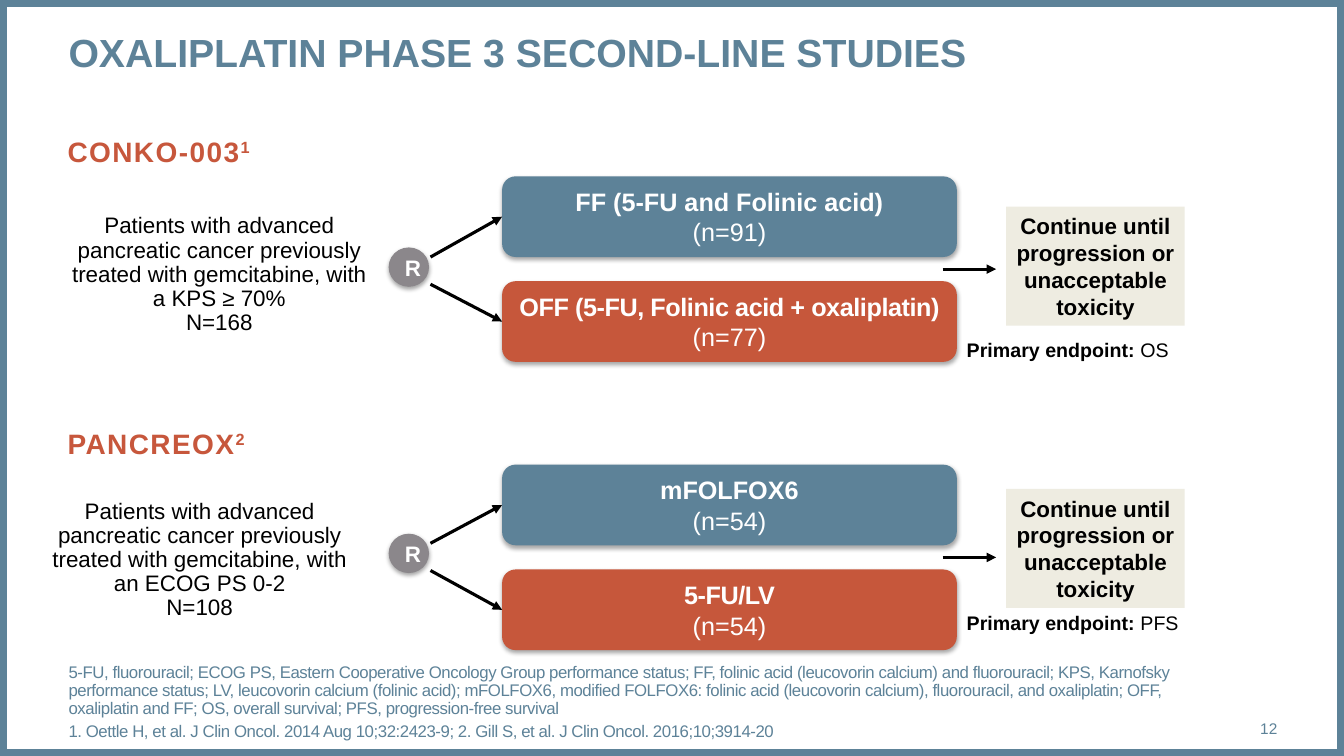
from dataclasses import dataclass

from pptx import Presentation
from pptx.dml.color import RGBColor
from pptx.enum.shapes import MSO_CONNECTOR, MSO_SHAPE
from pptx.enum.text import MSO_ANCHOR, MSO_AUTO_SIZE, PP_ALIGN
from pptx.oxml.ns import qn
from pptx.oxml.xmlchemy import OxmlElement
from pptx.util import Inches, Pt

STEEL = RGBColor(0x5D, 0x82, 0x98)
RUST = RGBColor(0xC6, 0x57, 0x3B)
HEADING_RUST = RGBColor(0xC7, 0x57, 0x3C)
GREY = RGBColor(0x8B, 0x87, 0x8B)
SAND = RGBColor(0xEE, 0xEC, 0xE1)
BLACK = RGBColor(0, 0, 0)
WHITE = RGBColor(0xFF, 0xFF, 0xFF)

LEFT, CENTER, RIGHT = PP_ALIGN.LEFT, PP_ALIGN.CENTER, PP_ALIGN.RIGHT
TOP, MIDDLE, BOTTOM = MSO_ANCHOR.TOP, MSO_ANCHOR.MIDDLE, MSO_ANCHOR.BOTTOM
RECTANGLE, ROUNDED, OVAL = MSO_SHAPE.RECTANGLE, MSO_SHAPE.ROUNDED_RECTANGLE, MSO_SHAPE.OVAL
STRAIGHT = MSO_CONNECTOR.STRAIGHT
NO_AUTOFIT = MSO_AUTO_SIZE.NONE

SLIDE_WIDTH, SLIDE_HEIGHT = 13.33, 7.5
ARM_LEFT, ARM_WIDTH, ARM_HEIGHT, ARM_STEP = 4.98, 4.51, 0.8, 1.04


@dataclass
class Trial:
    name: str
    reference: str
    heading_top: float
    population: str
    total: str
    population_area: tuple
    arms: list
    arms_top: float
    circle_top: float
    continue_top: float
    endpoint: str
    endpoint_top: float


TRIALS = [
    Trial("CONKO-003", "1", 1.33,
          "Patients with advanced pancreatic cancer previously treated with gemcitabine, with a KPS ≥ 70%",
          "N=168", (0.53, 2.08, 3.29, 1.31),
          [("FF (5-FU and Folinic acid)", "(n=91)"),
           ("OFF (5-FU, Folinic acid + oxaliplatin)", "(n=77)")],
          1.75, 2.46, 2.05, "OS", 3.35),
    Trial("PANCREOX", "2", 4.23,
          "Patients with advanced pancreatic cancer previously treated with gemcitabine, with an ECOG PS 0-2",
          "N=108", (0.37, 4.91, 3.22, 1.31),
          [("mFOLFOX6", "(n=54)"), ("5-FU/LV", "(n=54)")],
          4.61, 5.3, 4.85, "PFS", 6.06),
]
ARM_STYLES = [(STEEL, 0), (RUST, -0.3)]

ABBREVIATIONS = (
    "5-FU, fluorouracil; ECOG PS, Eastern Cooperative Oncology Group performance status; "
    "FF, folinic acid (leucovorin calcium) and fluorouracil; KPS, Karnofsky performance status; "
    "LV, leucovorin calcium (folinic acid); mFOLFOX6, modified FOLFOX6: folinic acid "
    "(leucovorin calcium), fluorouracil, and oxaliplatin; OFF, oxaliplatin and FF; "
    "OS, overall survival; PFS, progression-free survival")
REFERENCES = ("1. Oettle H, et al. J Clin Oncol. 2014 Aug 10;32:2423-9; "
              "2. Gill S, et al. J Clin Oncol. 2016;10;3914-20")


class SlideBuilder:
    font_name = "Arial"

    def __init__(self, slide):
        self.slide = slide

    def span(self, para, text, size, color, bold=False, spacing=0, raised=False):
        run = para.add_run()
        run.text = text
        run.font.name = self.font_name
        run.font.size = Pt(size)
        run.font.bold = bold
        run.font.color.rgb = color
        properties = run.font._element
        if spacing:
            properties.set("spc", str(round(spacing * 100)))
        if raised:
            properties.set("baseline", "30000")

    def paragraph(self, frame, align=LEFT, line_spacing=1.0, before=0):
        first = frame.paragraphs[0]
        para = frame.add_paragraph() if first.runs else first
        para.alignment = align
        para.line_spacing = line_spacing
        para.space_before = Pt(before)
        return para

    def prepare(self, frame, anchor, inset=True):
        frame.word_wrap = True
        frame.auto_size = NO_AUTOFIT
        frame.vertical_anchor = anchor
        if not inset:
            frame.margin_left = frame.margin_right = 0
            frame.margin_top = frame.margin_bottom = 0
        return frame

    def placeholder(self, index, area, anchor=TOP):
        holder = self.slide.placeholders[index]
        holder.left, holder.top, holder.width, holder.height = map(Inches, area)
        return self.prepare(holder.text_frame, anchor, inset=False)

    def plain_paragraph(self, frame, **options):
        para = self.paragraph(frame, **options)
        properties = para._p.get_or_add_pPr()
        properties.set("marL", "0")
        properties.set("indent", "0")
        properties.append(OxmlElement("a:buNone"))
        return para

    def text_box(self, area, anchor=TOP, inset=True):
        box = self.slide.shapes.add_textbox(*map(Inches, area))
        return self.prepare(box.text_frame, anchor, inset)

    def shape(self, kind, area, fill=None, line=None, line_width=0.75, shadow=False):
        shape = self.slide.shapes.add_shape(kind, *map(Inches, area))
        if fill is None:
            shape.fill.background()
        else:
            shape.fill.solid()
            shape.fill.fore_color.rgb = fill
        if line is None:
            shape.line.fill.background()
        else:
            shape.line.color.rgb = line
            shape.line.width = Pt(line_width)
        shape.shadow.inherit = False
        if shadow:
            self.drop_shadow(shape)
        self.prepare(shape.text_frame, MIDDLE)
        return shape

    def drop_shadow(self, shape):
        outer = OxmlElement("a:outerShdw")
        for key, value in (("blurRad", Pt(3.1)), ("dist", Pt(1.8)), ("dir", 5400000), ("rotWithShape", 0)):
            outer.set(key, str(int(value)))
        color = OxmlElement("a:srgbClr")
        color.set("val", str(BLACK))
        alpha = OxmlElement("a:alpha")
        alpha.set("val", "35000")
        color.append(alpha)
        outer.append(color)
        shape._element.spPr.find(qn("a:effectLst")).append(outer)

    def arrow(self, start, end, target=None):
        connector = self.slide.shapes.add_connector(STRAIGHT, *map(Inches, start + end))
        connector.line.color.rgb = BLACK
        connector.line.width = Pt(2.25)
        if target is not None:
            connector.end_connect(target, 1)
        head = OxmlElement("a:tailEnd")
        head.set("type", "triangle")
        properties = connector._element.spPr
        properties.find(qn("a:ln")).append(head)
        properties.append(OxmlElement("a:effectLst"))

    def trial(self, trial, heading_index):
        heading = self.plain_paragraph(self.placeholder(heading_index, (0.67, trial.heading_top, 2.38, 0.77)))
        self.span(heading, trial.name, 20, HEADING_RUST, bold=True, spacing=1)
        self.span(heading, trial.reference, 20, HEADING_RUST, bold=True, spacing=1, raised=True)

        population = self.text_box(trial.population_area)
        for text in (trial.population, trial.total):
            self.span(self.paragraph(population, CENTER, 0.9), text, 16, BLACK)

        circle = self.shape(OVAL, (3.86, trial.circle_top, 0.39, 0.38), GREY, GREY, shadow=True)
        self.span(self.paragraph(circle.text_frame, CENTER), "R", 16, WHITE, bold=True)

        for row, ((name, count), (color, spacing)) in enumerate(zip(trial.arms, ARM_STYLES)):
            top = trial.arms_top + row * ARM_STEP
            arm = self.shape(ROUNDED, (ARM_LEFT, top, ARM_WIDTH, ARM_HEIGHT), color, shadow=True)
            self.span(self.paragraph(arm.text_frame, CENTER), name, 18, WHITE, bold=True, spacing=spacing)
            self.span(self.paragraph(arm.text_frame, CENTER), count, 18, WHITE)
            start = (4.27, trial.circle_top + 0.09 + row * 0.27)
            self.arrow(start, (ARM_LEFT, top + ARM_HEIGHT / 2), arm)

        middle = trial.arms_top + (ARM_STEP + ARM_HEIGHT) / 2
        self.arrow((9.35, middle), (9.88, middle))

        outcome = self.shape(RECTANGLE, (9.98, trial.continue_top, 1.77, 1.18), SAND)
        self.span(self.paragraph(outcome.text_frame, CENTER),
                  "Continue until progression or unacceptable toxicity", 16, BLACK, bold=True)

        endpoint = self.paragraph(self.text_box((9.49, trial.endpoint_top, 2.76, 0.29)), line_spacing=0.8)
        self.span(endpoint, "Primary endpoint: ", 14, BLACK, bold=True)
        self.span(endpoint, trial.endpoint, 14, BLACK)


def main():
    deck = Presentation()
    deck.slide_width, deck.slide_height = Inches(SLIDE_WIDTH), Inches(SLIDE_HEIGHT)
    page = SlideBuilder(deck.slides.add_slide(deck.slide_layouts[4]))
    unused = page.slide.placeholders[4]._element
    unused.getparent().remove(unused)

    page.shape(RECTANGLE, (0, 0, SLIDE_WIDTH, SLIDE_HEIGHT), line=STEEL, line_width=10)
    title = page.paragraph(page.placeholder(0, (0.68, 0.28, 11.99, 0.94)))
    page.span(title, "OXALIPLATIN PHASE 3 SECOND-LINE STUDIES", 28, STEEL, bold=True)

    for trial, heading_index in zip(TRIALS, (1, 3)):
        page.trial(trial, heading_index)

    footnotes = page.placeholder(2, (0.68, 6.95, 11.13, 0.4), BOTTOM)
    for text, before in ((ABBREVIATIONS, 0), (REFERENCES, 3)):
        para = page.plain_paragraph(footnotes, line_spacing=0.9, before=before)
        page.span(para, text, 12, STEEL, spacing=-0.3)

    number = page.text_box((11.81, 7.03, 0.86, 0.4), MIDDLE, inset=False)
    page.span(page.paragraph(number, RIGHT), "12", 11, STEEL)
    deck.save("out.pptx")


if __name__ == "__main__":
    main()
